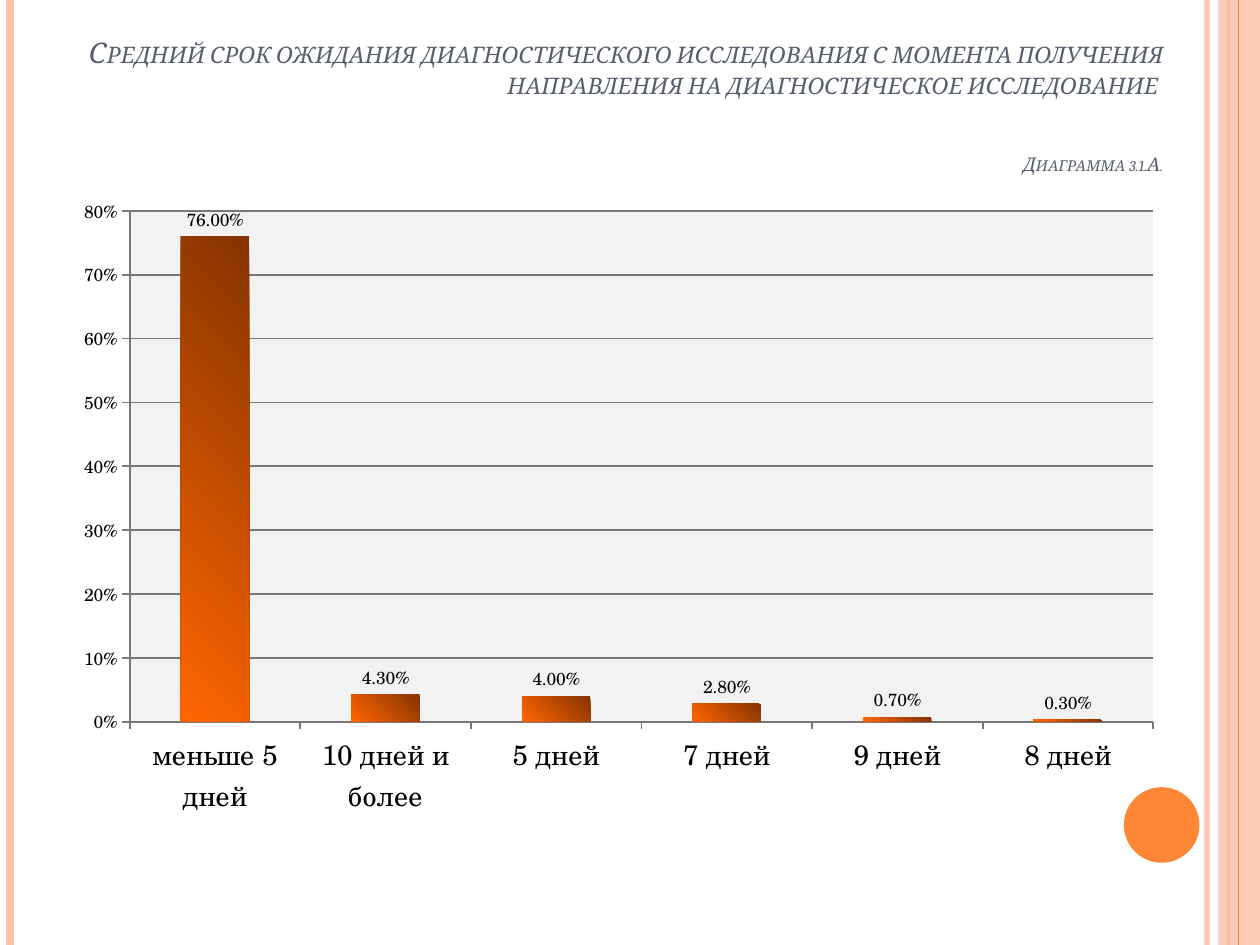
"""Build a slide with a column chart of waiting times for a diagnostic examination."""
from dataclasses import dataclass

import lxml.etree
import pptx
import pptx.chart.data
import pptx.dml.color
import pptx.enum.chart
import pptx.enum.shapes
import pptx.enum.text
import pptx.oxml
import pptx.oxml.ns
import pptx.util

WIDTH, HEIGHT = pptx.util.Inches(10), pptx.util.Inches(7.5)
COLORS = {
    "peach": "FEC3AE", "orange": "FE8637", "title": "575F6D", "text": "000000",
    "plot": "F2F2F2", "grid": "777777", "bright": "FF6600", "dark": "863300",
}
TITLE_FONT, CHART_FONT = "Cambria", "TeX Gyre Schola"
CHART_NS = "http://schemas.openxmlformats.org/drawingml/2006/chart"
DRAWING_NS = "http://schemas.openxmlformats.org/drawingml/2006/main"


@dataclass(frozen=True)
class Area:
    """Position and size as shares of the slide."""
    left: float
    top: float
    width: float
    height: float

    def lengths(self) -> tuple:
        return (int(self.left * WIDTH), int(self.top * HEIGHT),
                int(self.width * WIDTH), int(self.height * HEIGHT))


@dataclass(frozen=True)
class Stripe:
    x: float
    color: str
    points: float
    opacity: int = 100


@dataclass(frozen=True)
class Block:
    kind: int
    area: Area
    color: str
    opacity: int = 100


@dataclass(frozen=True)
class TitleLine:
    text: str
    size: float
    space_before: float = 0


DECOR = [
    Stripe(0.958, "peach", 3, 93),
    Stripe(0.008, "peach", 4.5),
    Stripe(0.975, "orange", 1.5),
    Block(pptx.enum.shapes.MSO_SHAPE.RECTANGLE, Area(0.967, 0, 0.033, 1), "peach", 87),
    Stripe(0.983, "orange", 0.75),
    Block(pptx.enum.shapes.MSO_SHAPE.OVAL, Area(0.892, 0.833, 0.06, 0.08), "orange"),
]
TITLE_AREA = Area(0.05, 0.04, 0.883, 0.176)
TITLE_LINES = [
    TitleLine("Средний срок ожидания диагностического исследования с момента получения "
              "направления на диагностическое исследование ", 16.2),
    TitleLine("Диаграмма 3.1.А.", 10.8, 31),
]
CHART_AREA = Area(0.05, 0.196, 0.883, 0.68)
PLOT_LAYOUT = {"x": 0.06, "y": 0.04, "w": 0.92, "h": 0.795}
WAITS = {"меньше 5 дней": 0.76, "10 дней и более": 0.043, "5 дней": 0.04,
         "7 дней": 0.028, "9 дней": 0.007, "8 дней": 0.003}


def rgb(name: str):
    return pptx.dml.color.RGBColor.from_string(COLORS[name])


def set_opacity(shape, percent: int) -> None:
    if percent < 100:
        color = shape._element.spPr.find(".//" + pptx.oxml.ns.qn("a:srgbClr"))
        alpha = lxml.etree.SubElement(color, pptx.oxml.ns.qn("a:alpha"))
        alpha.set("val", str(percent * 1000))


def draw_stripe(page, stripe: Stripe) -> None:
    x = int(stripe.x * WIDTH)
    line = page.shapes.add_connector(
        pptx.enum.shapes.MSO_CONNECTOR.STRAIGHT, x, 0, x, HEIGHT)
    line.line.color.rgb = rgb(stripe.color)
    line.line.width = pptx.util.Pt(stripe.points)
    set_opacity(line, stripe.opacity)
    lxml.etree.SubElement(line._element.spPr, pptx.oxml.ns.qn("a:effectLst"))


def draw_block(page, block: Block) -> None:
    shape = page.shapes.add_shape(block.kind, *block.area.lengths())
    shape.shadow.inherit = False
    shape.fill.solid()
    shape.fill.fore_color.rgb = rgb(block.color)
    shape.line.fill.background()
    set_opacity(shape, block.opacity)


def draw_title(page) -> None:
    box = page.shapes.add_textbox(*TITLE_AREA.lengths())
    frame = box.text_frame
    frame.word_wrap = True
    frame.vertical_anchor = pptx.enum.text.MSO_ANCHOR.BOTTOM
    frame.margin_top = 0
    frame.margin_bottom = pptx.util.Inches(0.23)
    for index, line in enumerate(TITLE_LINES):
        para = frame.add_paragraph() if index else frame.paragraphs[0]
        para.alignment = pptx.enum.text.PP_ALIGN.RIGHT
        para.line_spacing = 0.9
        para.space_before = pptx.util.Pt(line.space_before)
        span = para.add_run()
        span.text = line.text
        span.font.name = TITLE_FONT
        span.font.size = pptx.util.Pt(line.size)
        span.font.italic = True
        span.font.color.rgb = rgb("title")
        span.font._element.set("cap", "small")


def style_font(font, size: float) -> None:
    font.name = CHART_FONT
    font.size = pptx.util.Pt(size)
    font.color.rgb = rgb("text")


def style_line(line) -> None:
    line.color.rgb = rgb("grid")
    line.width = pptx.util.Pt(1)


def style_plot_area(chart) -> None:
    settings = "".join(f'<c:{key}Mode val="edge"/>' for key in "xy") + "".join(
        f'<c:{key} val="{share}"/>' for key, share in PLOT_LAYOUT.items())
    layout = pptx.oxml.parse_xml(
        f'<c:layout xmlns:c="{CHART_NS}"><c:manualLayout>'
        f'<c:layoutTarget val="inner"/>{settings}</c:manualLayout></c:layout>')
    area = chart._chartSpace.chart.plotArea
    for old in area.findall(pptx.oxml.ns.qn("c:layout")):
        area.remove(old)
    area.insert(0, layout)
    area.append(pptx.oxml.parse_xml(
        f'<c:spPr xmlns:c="{CHART_NS}" xmlns:a="{DRAWING_NS}"><a:solidFill>'
        f'<a:srgbClr val="{COLORS["plot"]}"/></a:solidFill></c:spPr>'))


def style_bars(plot) -> None:
    plot.gap_width = 150
    plot.vary_by_categories = False
    bars = plot.series[0]
    bars.invert_if_negative = False
    bars.format.fill.solid()
    properties = bars._element.spPr
    solid = properties.find(pptx.oxml.ns.qn("a:solidFill"))
    properties.replace(solid, pptx.oxml.parse_xml(
        f'<a:gradFill xmlns:a="{DRAWING_NS}" rotWithShape="1"><a:gsLst>'
        f'<a:gs pos="0"><a:srgbClr val="{COLORS["bright"]}"/></a:gs>'
        f'<a:gs pos="100000"><a:srgbClr val="{COLORS["dark"]}"/></a:gs></a:gsLst>'
        '<a:path path="circle"><a:fillToRect t="100000" r="100000"/></a:path></a:gradFill>'))
    labels = bars.data_labels
    labels.show_value = True
    labels.number_format = "0.00%"
    labels.number_format_is_linked = False
    labels.position = pptx.enum.chart.XL_LABEL_POSITION.OUTSIDE_END
    style_font(labels.font, 10)


def draw_chart(page) -> None:
    data = pptx.chart.data.CategoryChartData(number_format="0.00%")
    data.categories = list(WAITS)
    data.add_series("Series 1", list(WAITS.values()))
    chart = page.shapes.add_chart(
        pptx.enum.chart.XL_CHART_TYPE.COLUMN_CLUSTERED, *CHART_AREA.lengths(), data).chart
    chart.has_legend = False
    chart.has_title = False
    style_font(chart.font, 10)
    for axis, size in ((chart.category_axis, 16), (chart.value_axis, 10)):
        style_font(axis.tick_labels.font, size)
        style_line(axis.format.line)
        axis.major_tick_mark = pptx.enum.chart.XL_TICK_MARK.OUTSIDE
    values = chart.value_axis
    values.minimum_scale, values.maximum_scale, values.major_unit = 0, 0.8, 0.1
    values.tick_labels.number_format = "0%"
    values.tick_labels.number_format_is_linked = False
    values.has_major_gridlines = True
    style_line(values.major_gridlines.format.line)
    style_bars(chart.plots[0])
    style_plot_area(chart)


def main() -> None:
    deck = pptx.Presentation()
    deck.slide_width, deck.slide_height = WIDTH, HEIGHT
    page = deck.slides.add_slide(deck.slide_layouts[6])
    for item in DECOR:
        if isinstance(item, Stripe):
            draw_stripe(page, item)
        else:
            draw_block(page, item)
    draw_title(page)
    draw_chart(page)
    deck.save("out.pptx")


if __name__ == "__main__":
    main()
